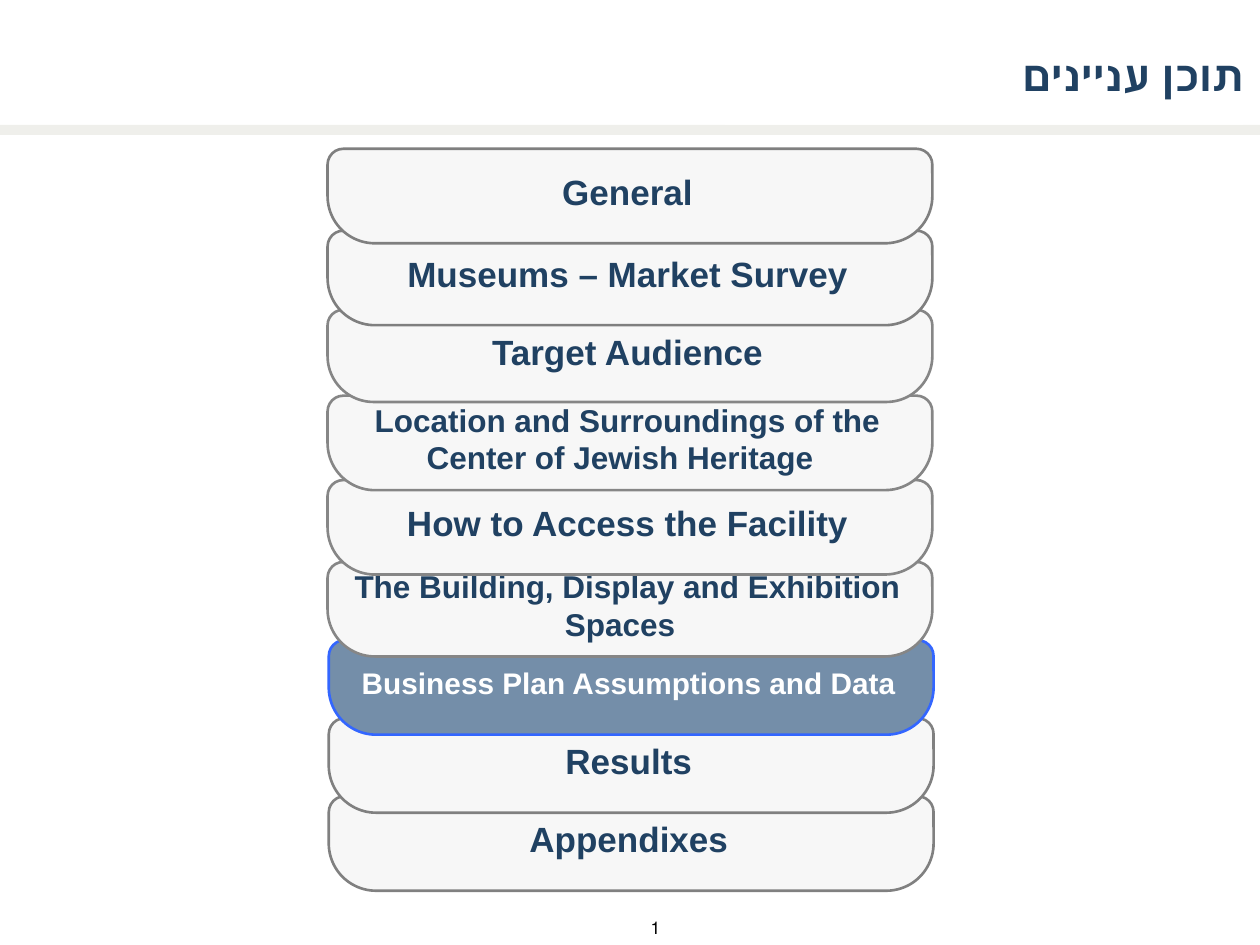
import pptx
import pptx.util
import pptx.dml.color
import pptx.enum.shapes
import pptx.enum.text
import lxml.etree

Pt = pptx.util.Pt
RGBColor = pptx.dml.color.RGBColor
SHAPE = pptx.enum.shapes.MSO_SHAPE
ALIGN = pptx.enum.text.PP_ALIGN
MIDDLE = pptx.enum.text.MSO_ANCHOR.MIDDLE

NAVY = RGBColor(0x20, 0x41, 0x62)
WHITE = RGBColor(0xFF, 0xFF, 0xFF)
BLACK = RGBColor(0, 0, 0)
STONE = RGBColor(0xE1, 0xE1, 0xD9)
PALE = RGBColor(0xF7, 0xF7, 0xF7)
STEEL = RGBColor(0x74, 0x8E, 0xA9)
BLUE = RGBColor(0x33, 0x66, 0xFF)
GREY = RGBColor(0x80, 0x80, 0x80)
MID_GREY = RGBColor(0x86, 0x86, 0x86)
DARK_GREY = RGBColor(0x7F, 0x7F, 0x7F)


def add_block(shapes, kind, left, top, width, height, fill):
    block = shapes.add_shape(kind, Pt(left), Pt(top), Pt(width), Pt(height))
    block.shadow.inherit = False
    block.fill.solid()
    block.fill.fore_color.rgb = fill
    block.line.fill.background()
    return block


def write(frame, text, size, color, align, bold, insets):
    frame.word_wrap = True
    frame.margin_left, frame.margin_top, frame.margin_right, frame.margin_bottom = map(Pt, insets)
    paragraph = frame.paragraphs[0]
    paragraph.text = text
    paragraph.alignment = align
    paragraph.font.name = "Arial"
    paragraph.font.size = Pt(size)
    paragraph.font.bold = bold
    paragraph.font.color.rgb = color
    properties = paragraph._p.get_or_add_pPr()
    properties.set("rtl", "1")
    return properties


deck = pptx.Presentation()
deck.slide_width, deck.slide_height = Pt(720), Pt(540)
slide = deck.slides.add_slide(deck.slide_layouts[6])

# Half-transparent rule under the title
rule = add_block(slide.shapes, SHAPE.RECTANGLE, 0, 71.3, 720, 5.8, STONE)
rule_color = rule.fill._xPr.find(".//" + pptx.oxml.ns.qn("a:srgbClr"))
lxml.etree.SubElement(rule_color, pptx.oxml.ns.qn("a:alpha"), val="50000")

# Page number
page_number = slide.shapes.add_textbox(Pt(336.2), Pt(520.6), Pt(48.2), Pt(30))
write(page_number.text_frame, "1", 10, BLACK, ALIGN.RIGHT, False, (7.2, 3.6, 7.2, 3.6))

# Title
title = add_block(slide.shapes, SHAPE.RECTANGLE, 414, 13.7, 296.6, 57.6, WHITE)
title.text_frame.vertical_anchor = MIDDLE
write(title.text_frame, "תוכן עניינים", 24, NAVY, ALIGN.RIGHT, True, (0, 0, 0, 0))

# Chapters: text, size, left, top, height, outline
chapters = [
    ("General", 20, 187.2, 85, 54, DARK_GREY),
    ("Museums – Market Survey", 20, 187.2, 131.8, 54, DARK_GREY),
    ("Target Audience", 20, 187.2, 177.1, 52.6, MID_GREY),
    ("Location and Surroundings of the Center of Jewish Heritage", 18, 187.2, 226.1, 54, MID_GREY),
    ("How to Access the Facility", 20, 187.2, 274.3, 54, MID_GREY),
    ("The Building, Display and Exhibition Spaces", 18, 187.2, 321.1, 54, MID_GREY),
    ("Business Plan Assumptions and Data", 17, 187.9, 365.8, 54, BLUE),
    ("Results", 20, 187.9, 410.4, 54, GREY),
    ("Appendixes", 20, 187.9, 455, 54, GREY),
]

# Each chapter overlaps the one below it, so the last is drawn first
stack = slide.shapes.add_group_shape()
for text, size, left, top, height, outline in reversed(chapters):
    current = outline == BLUE
    chapter = add_block(stack.shapes, SHAPE.ROUND_2_SAME_RECTANGLE, left, top, 345.6, height,
                        STEEL if current else PALE)
    chapter.adjustments[0] = 0.167
    chapter.adjustments[1] = 0.5
    chapter.line.color.rgb = outline
    chapter.line.width = Pt(1.5)
    chapter.text_frame.vertical_anchor = MIDDLE
    properties = write(chapter.text_frame, text, size, WHITE if current else NAVY,
                       ALIGN.CENTER, True, (4.3, 3.6, 7.2, 3.6))
    properties.set("marL", str(Pt(8.6)))
    properties.set("indent", str(-Pt(8.6)))

deck.save("out.pptx")
